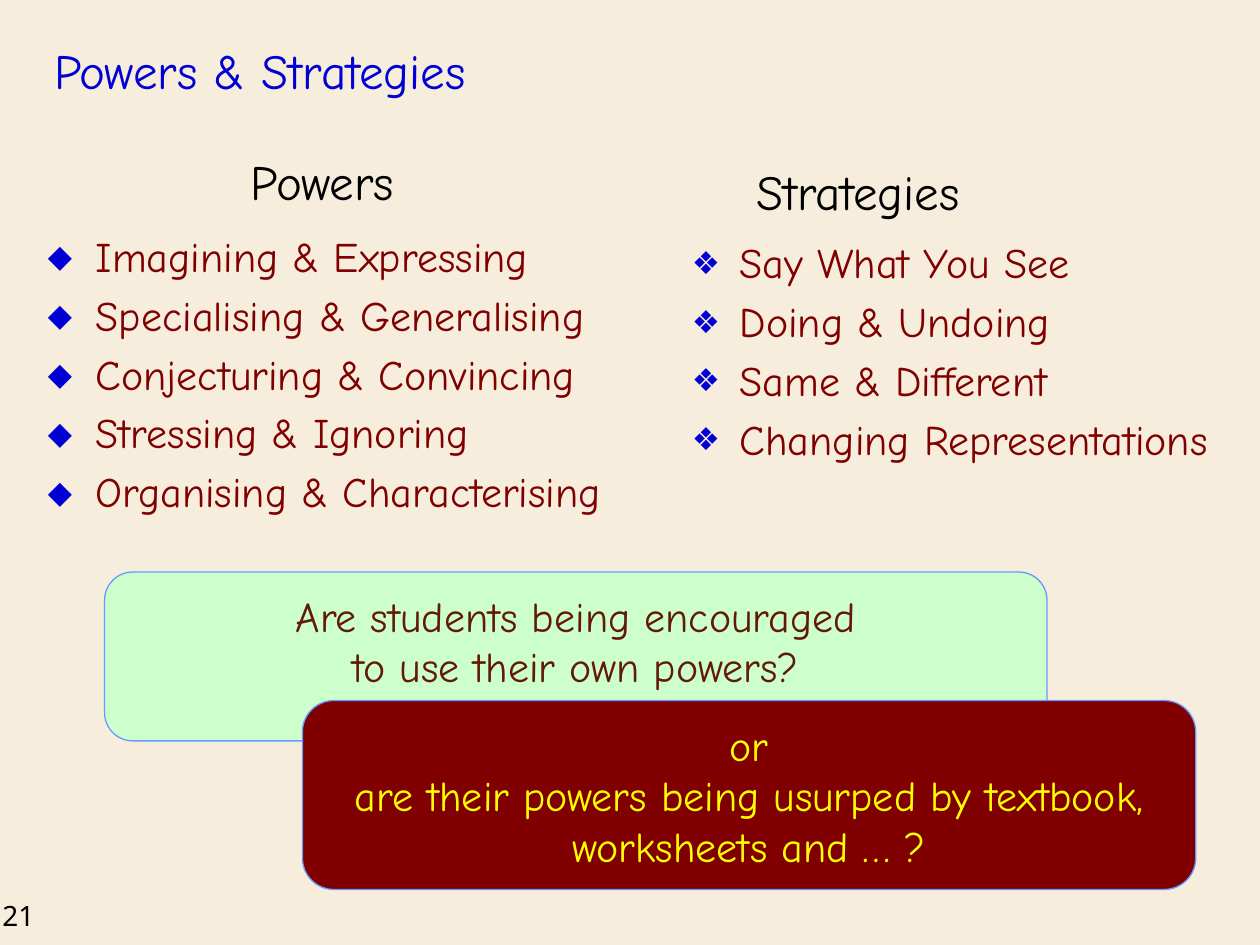
from dataclasses import dataclass

from lxml.etree import SubElement
from pptx import Presentation
from pptx.dml.color import RGBColor as RGB
from pptx.enum.shapes import MSO_SHAPE as Shape
from pptx.enum.text import MSO_ANCHOR as Anchor, MSO_AUTO_SIZE as AutoSize, PP_ALIGN as Align
from pptx.oxml.ns import qn
from pptx.util import Inches, Pt


@dataclass(frozen=True)
class Theme:
    font: str = "Comic Neue"
    number_font: str = "Noto Sans"
    background: str = "F6EDDD"
    accent: str = "0000D4"
    ink: str = "000000"
    maroon: str = "800000"
    brown: str = "631908"
    mint: str = "CCFFCC"
    yellow: str = "FFFF00"
    outline: str = "6699FF"
    heading_size: int = 28
    body_size: int = 24
    number_size: int = 16


class SlideBuilder:
    def __init__(self, slide, theme):
        self.slide = slide
        self.theme = theme
        fill = slide.background.fill
        fill.solid()
        fill.fore_color.rgb = RGB.from_string(theme.background)

    def place(self, shape, box):
        shape.left, shape.top, shape.width, shape.height = map(Inches, box)

    def prepare_frame(self, shape, anchor=Anchor.TOP):
        frame = shape.text_frame
        frame.word_wrap = True
        frame.auto_size = AutoSize.NONE
        frame.vertical_anchor = anchor
        return frame

    def add_run(self, paragraph, text, size, color, font=None):
        run = paragraph.add_run()
        run.text = text
        run.font.name = font or self.theme.font
        run.font.size = Pt(size)
        run.font.color.rgb = RGB.from_string(color)

    def title(self, text, box):
        shape = self.slide.shapes.title
        self.place(shape, box)
        paragraph = self.prepare_frame(shape, Anchor.BOTTOM).paragraphs[0]
        paragraph.alignment = Align.LEFT
        self.add_run(paragraph, text, self.theme.heading_size, self.theme.accent)

    def bullet_list(self, index, items, box, symbol):
        shape = self.slide.placeholders[index]
        self.place(shape, box)
        frame = self.prepare_frame(shape)
        for number, item in enumerate(items):
            paragraph = frame.add_paragraph() if number else frame.paragraphs[0]
            paragraph.space_before = Pt(0.2 * self.theme.body_size)
            self.set_bullet(paragraph, symbol)
            self.add_run(paragraph, item, self.theme.body_size, self.theme.maroon)

    def set_bullet(self, paragraph, symbol):
        """Give the paragraph a coloured symbol and a hanging indent."""
        properties = paragraph._p.get_or_add_pPr()
        indent = Inches(0.38)
        properties.set("marL", str(indent))
        properties.set("indent", str(-indent))
        color = SubElement(properties, qn("a:buClr"))
        SubElement(color, qn("a:srgbClr"), val=self.theme.accent)
        SubElement(properties, qn("a:buSzPct"), val="75000")
        SubElement(properties, qn("a:buFont"), typeface=self.theme.number_font)
        SubElement(properties, qn("a:buChar"), char=symbol)

    def label(self, text, box, size, align=Align.LEFT, font=None):
        shape = self.slide.shapes.add_textbox(*map(Inches, box))
        paragraph = self.prepare_frame(shape).paragraphs[0]
        paragraph.alignment = align
        self.add_run(paragraph, text, size, self.theme.ink, font)

    def question_card(self, lines, box, fill, color, anchor):
        shape = self.slide.shapes.add_shape(Shape.ROUNDED_RECTANGLE, *map(Inches, box))
        shape.shadow.inherit = False
        shape.fill.solid()
        shape.fill.fore_color.rgb = RGB.from_string(fill)
        shape.line.color.rgb = RGB.from_string(self.theme.outline)
        shape.line.width = Pt(0.75)
        frame = self.prepare_frame(shape, anchor)
        frame.margin_top = frame.margin_bottom = Inches(0.08)
        paragraph = frame.paragraphs[0]
        paragraph.alignment = Align.CENTER
        for number, line in enumerate(lines):
            if number:
                paragraph.add_line_break()
            self.add_run(paragraph, line, self.theme.body_size, color)


def main():
    presentation = Presentation()
    presentation.slide_width, presentation.slide_height = Inches(10), Inches(7.5)
    two_content = presentation.slide_layouts[3]
    theme = Theme()
    builder = SlideBuilder(presentation.slides.add_slide(two_content), theme)

    builder.label("21", (-0.08, 7.08, 0.75, 0.37), theme.number_size, font=theme.number_font)
    builder.title("Powers & Strategies", (0.33, 0.17, 8.5, 0.67))

    powers = ["Imagining & Expressing", "Specialising & Generalising",
              "Conjecturing & Convincing", "Stressing & Ignoring",
              "Organising & Characterising"]
    strategies = ["Say What You See", "Doing & Undoing", "Same & Different",
                  "Changing Representations"]
    builder.bullet_list(1, powers, (0.28, 1.78, 4.8, 2.36), "◆")
    builder.bullet_list(2, strategies, (5.39, 1.83, 4.61, 2.23), "❖")
    for heading, left, top in (("Powers", 0.83, 1.15), ("Strategies", 5.08, 1.23)):
        builder.label(heading, (left, top, 3.46, 0.57), theme.heading_size, Align.CENTER)

    builder.question_card(
        ["Are students being encouraged", "to use their own powers?"],
        (0.83, 4.54, 7.48, 1.34), theme.mint, theme.brown, Anchor.TOP)
    builder.question_card(
        ["or", "are their powers being usurped by textbook, worksheets and … ?"],
        (2.4, 5.56, 7.09, 1.5), theme.maroon, theme.yellow, Anchor.MIDDLE)

    presentation.save("out.pptx")


if __name__ == "__main__":
    main()
